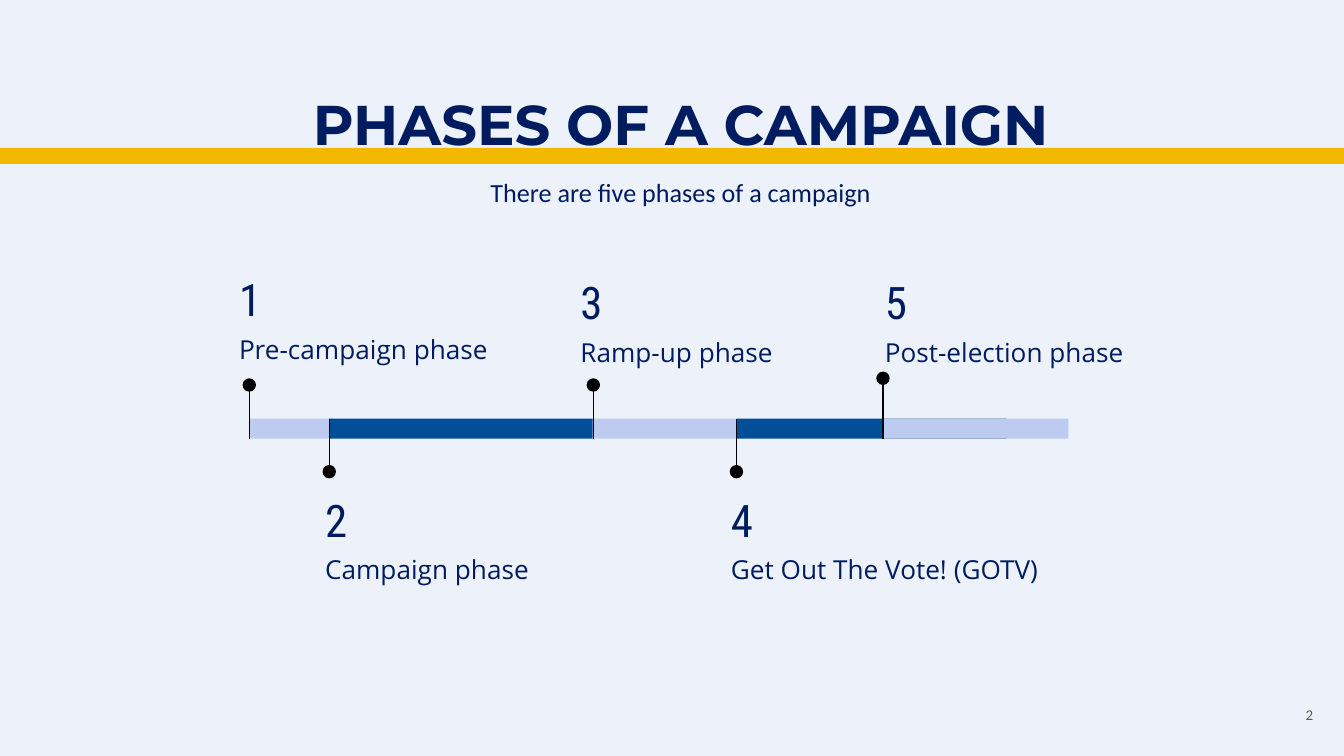
from lxml.etree import SubElement
from pptx import Presentation
from pptx.dml.color import RGBColor
from pptx.enum.shapes import MSO_CONNECTOR, MSO_SHAPE
from pptx.enum.text import MSO_ANCHOR, PP_ALIGN
from pptx.oxml.ns import qn
from pptx.util import Emu, Pt

PX = 4572
COLORS = {
    "bg": "EDF2FA", "gold": "F2B802", "navy": "001C60", "blue": "004F96",
    "pale": "BCCBEF", "black": "000000", "grey": "595959",
}
BAR_TOP, BAR_HEIGHT, DOT = 623, 30, 20
PHASES = [
    ("3", "Ramp-up phase", 883, 213, "pale", 563, (844, 404, 656)),
    ("4", "Get Out The Vote! (GOTV)", 1096, 402, "blue", 692, (1068, 728, 656)),
    ("1", "Pre-campaign phase", 371, 124, "pale", 563, (336, 400, 656)),
    ("2", "Campaign phase", 490, 392, "blue", 692, (464, 728, 656)),
    ("5", "Post-election phase", 1314, 276, "pale", 553, (1297, 404, 402)),
]


def px(*values):
    """Turn whole px into EMU lengths."""
    return [Emu(v * PX) for v in values]


def color(name):
    """Look up a named colour."""
    return RGBColor.from_string(COLORS[name])


def add_block(s, kind, box, fill):
    """Add a filled shape without outline or shadow."""
    sp = s.shapes.add_shape(kind, *px(*box))
    sp.shadow.inherit = False
    sp.fill.solid()
    sp.fill.fore_color.rgb = color(fill)
    sp.line.fill.background()


def add_stem(s, x, y1, y2):
    """Add a thin vertical line."""
    line = s.shapes.add_connector(MSO_CONNECTOR.STRAIGHT, *px(x, y1, x, y2))
    line.line.color.rgb = color("black")
    line.line.width = Pt(0.75)
    SubElement(line._element.spPr, qn("a:effectLst"))


def add_text(s, box, lines, fill="navy", align=PP_ALIGN.LEFT, bold=False,
             spacing=1.0, anchor=MSO_ANCHOR.TOP):
    """Add a text box with one paragraph per (text, size, font)."""
    tf = s.shapes.add_textbox(*px(*box)).text_frame
    tf.word_wrap = True
    tf.vertical_anchor = anchor
    tf.margin_left, tf.margin_top, tf.margin_right, tf.margin_bottom = px(20, 20, 20, 20)
    for i, (text, size, font) in enumerate(lines):
        p = tf.add_paragraph() if i else tf.paragraphs[0]
        p.alignment = align
        p.line_spacing = spacing
        if i:
            p.space_before = Pt(7.6)
        r = p.add_run()
        r.text = text
        r.font.size = Pt(size)
        r.font.name = font
        r.font.bold = bold
        r.font.color.rgb = color(fill)


def add_phase(s, number, label, x, width, fill, dot_top, text_at):
    """Add a timeline segment with its pin and label."""
    add_block(s, MSO_SHAPE.RECTANGLE, (x, BAR_TOP, width, BAR_HEIGHT), fill)
    far_end = BAR_TOP if dot_top > BAR_TOP else BAR_TOP + BAR_HEIGHT
    add_stem(s, x, dot_top + DOT // 2, far_end)
    add_block(s, MSO_SHAPE.OVAL, (x - DOT // 2, dot_top, DOT, DOT), "black")
    lines = [(number, 24, "Roboto Condensed"), (label, 14, "Open Sans")]
    add_text(s, (*text_at, 158), lines, spacing=0.8)


def main():
    """Build the campaign phases slide."""
    prs = Presentation()
    prs.slide_width, prs.slide_height = px(2000, 1125)
    s = prs.slides.add_slide(prs.slide_layouts[6])
    s.background.fill.solid()
    s.background.fill.fore_color.rgb = color("bg")
    add_block(s, MSO_SHAPE.RECTANGLE, (-34, 220, 2086, 24), "gold")
    add_text(s, (378, 114, 1270, 106), [("PHASES OF A CAMPAIGN", 30, "Montserrat")],
             align=PP_ALIGN.CENTER, bold=True)
    add_text(s, (628, 242, 770, 88),
             [("There are five phases of a campaign", 14, "Calibri")],
             align=PP_ALIGN.CENTER)
    for phase in PHASES:
        add_phase(s, *phase)
    add_text(s, (1854, 1021, 120, 86), [("2", 8, "Calibri")], "grey",
             PP_ALIGN.RIGHT, anchor=MSO_ANCHOR.MIDDLE)
    prs.save("out.pptx")


if __name__ == "__main__":
    main()
